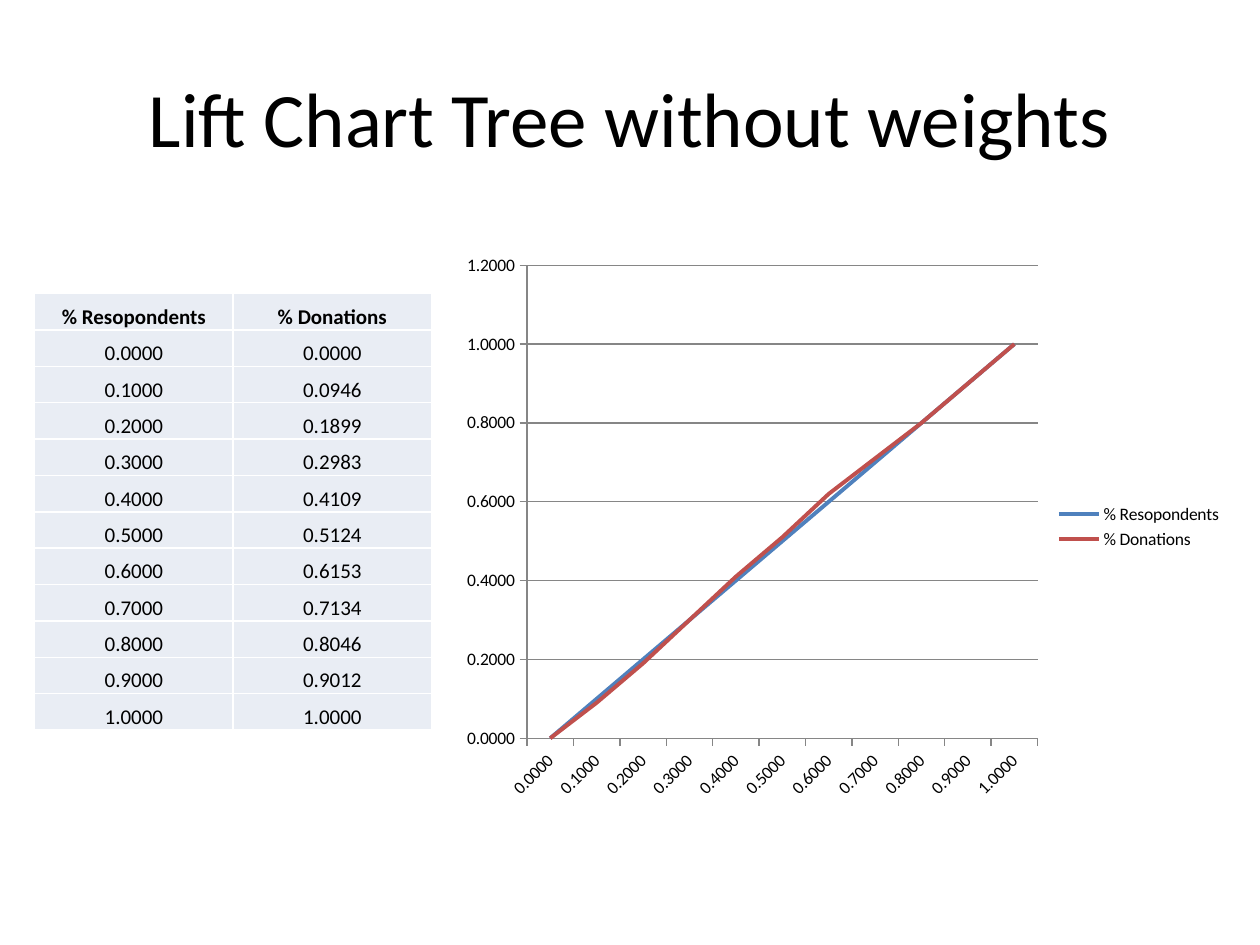
from dataclasses import dataclass

import lxml.etree
import pptx
import pptx.chart.data
import pptx.dml.color
import pptx.enum.chart
import pptx.enum.text
import pptx.oxml.ns
import pptx.util

Cm, Pt = pptx.util.Cm, pptx.util.Pt
FONT = "Calibri"
FORMAT = "0.0000"
COLORS = {
    "text": "000000",
    "cell": "E9EDF4",
    "border": "FFFFFF",
    "axis": "868686",
    "respondents": "4F81BD",
    "donations": "C0504D",
}


@dataclass
class Box:
    left: float
    top: float
    width: float
    height: float

    def emu(self) -> list:
        return [Cm(v) for v in (self.left, self.top, self.width, self.height)]


@dataclass
class Series:
    name: str
    color: str
    values: list


SERIES = [
    Series("% Resopondents", "respondents", [i / 10 for i in range(11)]),
    Series("% Donations", "donations",
           [0, 0.0946, 0.1899, 0.2983, 0.4109, 0.5124, 0.6153, 0.7134, 0.8046, 0.9012, 1]),
]


def rgb(name: str) -> pptx.dml.color.RGBColor:
    return pptx.dml.color.RGBColor.from_string(COLORS[name])


def set_attrs(obj, **values) -> None:
    for name, value in values.items():
        setattr(obj, name, value)


def style_font(font, size: float, bold: bool = False) -> None:
    set_attrs(font, name=FONT, size=Pt(size), bold=bold)
    font.color.rgb = rgb("text")


def style_line(line, color: str, width: float) -> None:
    line.color.rgb = rgb(color)
    line.width = Pt(width)


def write(tf, text: str, size: float, bold: bool = False) -> None:
    p = tf.paragraphs[0]
    p.alignment = pptx.enum.text.PP_ALIGN.CENTER
    r = p.add_run()
    r.text = text
    style_font(r.font, size, bold)


def add_borders(cell) -> None:
    qn = pptx.oxml.ns.qn
    tc_pr = cell._tc.get_or_add_tcPr()
    for side in ("lnL", "lnR", "lnT", "lnB"):
        ln = lxml.etree.SubElement(tc_pr, qn(f"a:{side}"), w=str(Pt(1)))
        fill = lxml.etree.SubElement(ln, qn("a:solidFill"))
        lxml.etree.SubElement(fill, qn("a:srgbClr"), val=COLORS["border"])


def add_title(s, box: Box, text: str) -> None:
    tf = s.shapes.add_textbox(*box.emu()).text_frame
    set_attrs(tf, word_wrap=True, vertical_anchor=pptx.enum.text.MSO_ANCHOR.MIDDLE)
    write(tf, text, 44)


def add_table(s, box: Box, series: list[Series]) -> None:
    columns = [[d.name] + [f"{v:.4f}" for v in d.values] for d in series]
    rows = list(zip(*columns))
    table = s.shapes.add_table(len(rows), len(columns), *box.emu()).table
    set_attrs(table, first_row=False, horz_banding=False)
    for i, row in enumerate(rows):
        for j, text in enumerate(row):
            cell = table.cell(i, j)
            add_borders(cell)
            cell.fill.solid()
            cell.fill.fore_color.rgb = rgb("cell")
            set_attrs(cell, margin_left=Cm(0.03), margin_right=Cm(0.03), margin_top=Cm(0.03),
                      margin_bottom=0, vertical_anchor=pptx.enum.text.MSO_ANCHOR.BOTTOM)
            write(cell.text_frame, text, 12, bold=i == 0)


def add_chart(s, box: Box, series: list[Series]) -> None:
    enums = pptx.enum.chart
    data = pptx.chart.data.CategoryChartData(number_format=FORMAT)
    data.categories = series[0].values
    data.categories.number_format = FORMAT
    for d in series:
        data.add_series(d.name, [round(v, 2) for v in d.values])
    chart = s.shapes.add_chart(enums.XL_CHART_TYPE.LINE, *box.emu(), data).chart
    set_attrs(chart, has_title=False, has_legend=True)
    style_font(chart.font, 10)
    set_attrs(chart.legend, position=enums.XL_LEGEND_POSITION.RIGHT, include_in_layout=False)
    chart.plots[0].vary_by_categories = False
    for line, d in zip(chart.plots[0].series, series):
        line.smooth = False
        line.marker.style = enums.XL_MARKER_STYLE.NONE
        style_line(line.format.line, d.color, 2.25)
    for axis in (chart.category_axis, chart.value_axis):
        set_attrs(axis, major_tick_mark=enums.XL_TICK_MARK.OUTSIDE,
                  minor_tick_mark=enums.XL_TICK_MARK.NONE)
        set_attrs(axis.tick_labels, number_format=FORMAT, number_format_is_linked=False)
        style_line(axis.format.line, "axis", 0.75)
    set_attrs(chart.value_axis, has_major_gridlines=True, minimum_scale=0,
              maximum_scale=1.2, major_unit=0.2)
    style_line(chart.value_axis.major_gridlines.format.line, "axis", 0.75)


def main() -> None:
    """Build the lift chart slide with its table of values."""
    prs = pptx.Presentation()
    set_attrs(prs, slide_width=Cm(25.4), slide_height=Cm(19.05))
    s = prs.slides.add_slide(prs.slide_layouts[6])
    add_title(s, Box(1.27, 0.76, 22.86, 3.18), "Lift Chart Tree without weights")
    add_table(s, Box(0.7, 5.92, 8, 8.8), SERIES)
    add_chart(s, Box(9.1, 4.92, 15.8, 11.4), SERIES)
    prs.save("out.pptx")


if __name__ == "__main__":
    main()
